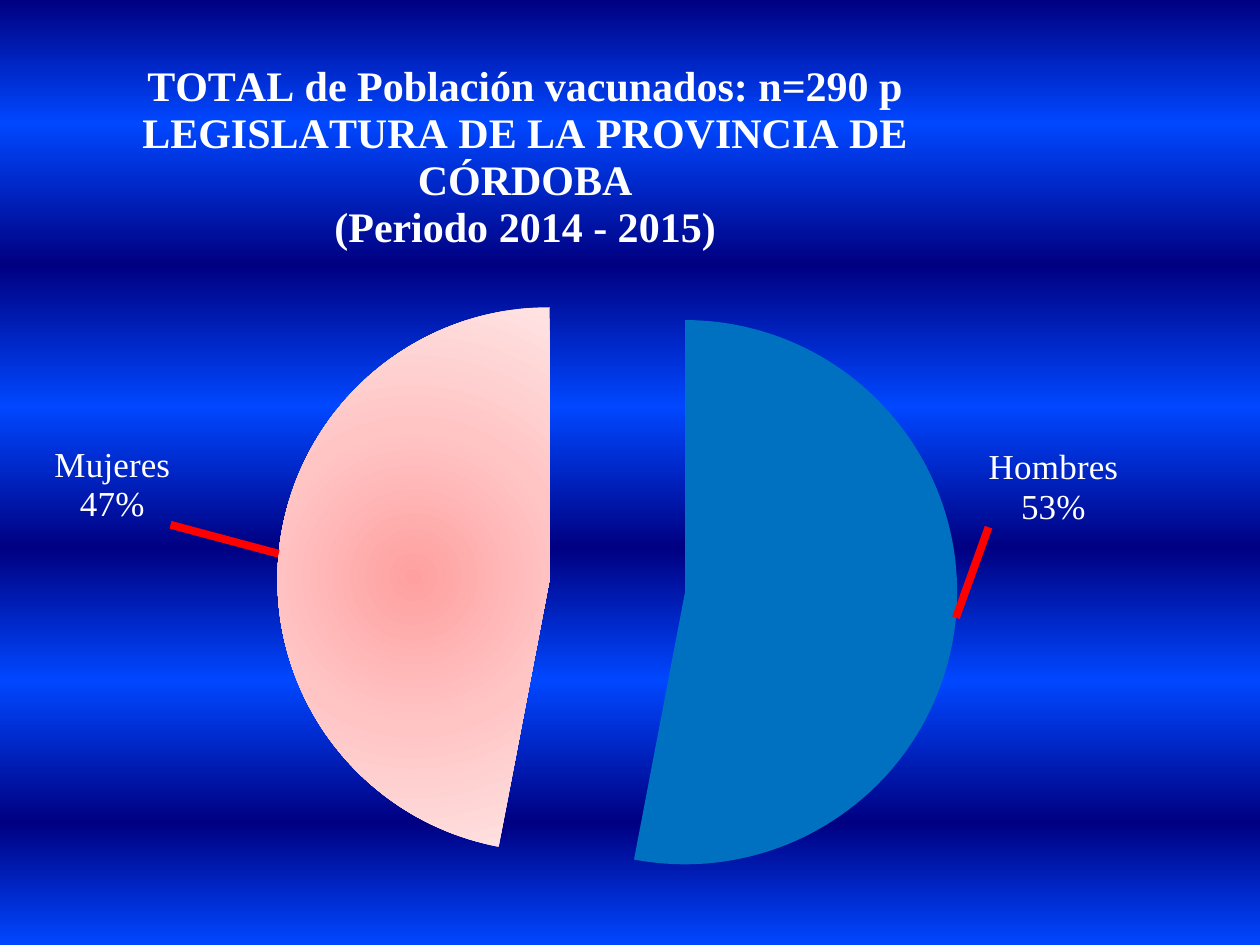
import pptx
import pptx.chart.data
import pptx.dml.color
import pptx.enum.chart
import pptx.oxml
import pptx.oxml.ns
import pptx.util

WIDE, HIGH = 10, 7.5
SERIF = "Times New Roman"
HEAD = [
    "TOTAL de Población vacunados: n=290 p",
    "LEGISLATURA DE LA PROVINCIA DE",
    "CÓRDOBA",
    "(Periodo 2014 - 2015)",
]
BANDS = [(pos, ("000082", "0047FF")[i % 2])
         for i, pos in enumerate((0, 13, 28, 43, 58, 72, 87, 100))]
PINKS = [(0, "FFA0A0"), (50, "FFC5C5"), (100, "FFE3E3")]
LINEAR = '<a:lin ang="5400000" scaled="1"/>'
RADIAL = ('<a:path path="circle"><a:fillToRect l="50000" t="50000" '
          'r="50000" b="50000"/></a:path>')


def parse(xml):
    """Turn markup into an element, declaring its namespaces."""
    tag, rest = xml.split(">", 1)
    end = "/" if tag.endswith("/") else ""
    spaces = pptx.oxml.ns.nsdecls("a", "c")
    return pptx.oxml.parse_xml(f"{tag.rstrip('/')} {spaces}{end}>{rest}")


def rgb(code):
    """Give the colour for a hex string."""
    return pptx.dml.color.RGBColor.from_string(code)


def blend(fill, root, stops, form):
    """Paint a fill with a gradient of many stops."""
    fill.solid()
    old = root.xpath(".//a:solidFill")[0]
    marks = "".join(f'<a:gs pos="{pos * 1000}"><a:srgbClr val="{rgb(code)}"/></a:gs>'
                    for pos, code in stops)
    new = parse(f'<a:gradFill rotWithShape="1"><a:gsLst>{marks}</a:gsLst>{form}</a:gradFill>')
    old.getparent().replace(old, new)


def place(item, index, **shares):
    """Set a manual layout, in shares of the chart, on a chart part."""
    for old in item.xpath("./c:layout"):
        item.remove(old)
    inner = '<c:layoutTarget val="inner"/>' if "w" in shares else ""
    modes = "".join(f'<c:{key}Mode val="edge"/>' for key in "xy") if index == 0 or item.tag.endswith("title") else ""
    sizes = "".join(f'<c:{key} val="{val}"/>' for key, val in shares.items())
    item.insert(index, parse(
        f"<c:layout><c:manualLayout>{inner}{modes}{sizes}</c:manualLayout></c:layout>"))


def write(frame, lines, size):
    """Write bold white serif lines, one paragraph each."""
    frame.text = "\n".join(lines)
    for para in frame.paragraphs:
        style(para.font, size)


def style(font, size):
    """Set the common bold white serif font."""
    font.name, font.size, font.bold = SERIF, pptx.util.Pt(size), True
    font.color.rgb = rgb("FFFFFF")


def add_pie(slide):
    """Add the pie that fills the slide."""
    data = pptx.chart.data.CategoryChartData()
    data.categories = ["HOMBRES", "MUJERES"]
    data.add_series("Series 1", (53, 47))
    chart = slide.shapes.add_chart(
        pptx.enum.chart.XL_CHART_TYPE.PIE, 0, 0,
        pptx.util.Inches(WIDE), pptx.util.Inches(HIGH), data).chart
    chart.has_legend = False
    chart.font.name, chart.font.size = "Calibri", pptx.util.Pt(10)
    chart.font.color.rgb = rgb("FFFFFF")
    write(chart.chart_title.text_frame, HEAD, 24)
    place(chart.element.xpath(".//c:title")[0], 1, x=0.11, y=0.06)
    place(chart.element.xpath(".//c:plotArea")[0], 0, x=0.22, y=0.26, w=0.54, h=0.72)
    return chart


def paint(chart):
    """Pull the slices apart and fill them."""
    series = chart.plots[0].series[0]
    root = chart.element
    root.xpath(".//c:ser/c:tx")[0].addnext(parse('<c:explosion val="25"/>'))
    men, women = (series.points[i].format for i in range(2))
    men.fill.solid()
    men.fill.fore_color.rgb = rgb("0070C0")
    women.fill.solid()
    blend(women.fill, root.xpath(".//c:dPt[c:idx/@val='1']/c:spPr")[0], PINKS, RADIAL)
    for form in (men, women):
        form.line.fill.background()


def label(chart):
    """Label the slices and tie the labels to them with red lines."""
    series = chart.plots[0].series[0]
    out = pptx.enum.chart.XL_LABEL_POSITION.OUTSIDE_END
    marks = series.data_labels
    marks.show_value = False
    marks.show_percentage = marks.show_category_name = True
    marks.position = out
    style(marks.font, 20)
    root = chart.element.xpath(".//c:ser/c:dLbls")[0]
    spots = [("Hombres", "53%", 0.02, -0.18), ("Mujeres", "47%", -0.08, -0.03)]
    for i, (name, share, left, top) in enumerate(spots):
        mark = series.points[i].data_label
        write(mark.text_frame, (name, share), 20)
        mark.position = out
        item = root.xpath(f"./c:dLbl[c:idx/@val='{i}']")[0]
        place(item, 1, x=left, y=top)
        for key, val in (("showVal", "0"), ("showCatName", "1"), ("showPercent", "1")):
            item.xpath(f"./c:{key}")[0].set("val", val)
    for old in root.xpath("./c:showLeaderLines | ./c:leaderLines"):
        root.remove(old)
    root.append(parse('<c:showLeaderLines val="1"/>'))
    root.append(parse(
        f'<c:leaderLines><c:spPr><a:ln w="{pptx.util.Pt(4.5)}"><a:solidFill>'
        f'<a:srgbClr val="{rgb("FF0000")}"/></a:solidFill></a:ln></c:spPr></c:leaderLines>'))


def main():
    """Build the slide and save it."""
    deck = pptx.Presentation()
    deck.slide_width, deck.slide_height = pptx.util.Inches(WIDE), pptx.util.Inches(HIGH)
    slide = deck.slides.add_slide(deck.slide_layouts[6])
    blend(slide.background.fill, slide.element.xpath(".//p:bg")[0]
          if slide.element.xpath(".//p:bg") else slide.element, BANDS, LINEAR)
    chart = add_pie(slide)
    paint(chart)
    label(chart)
    deck.save("out.pptx")


if __name__ == "__main__":
    main()
